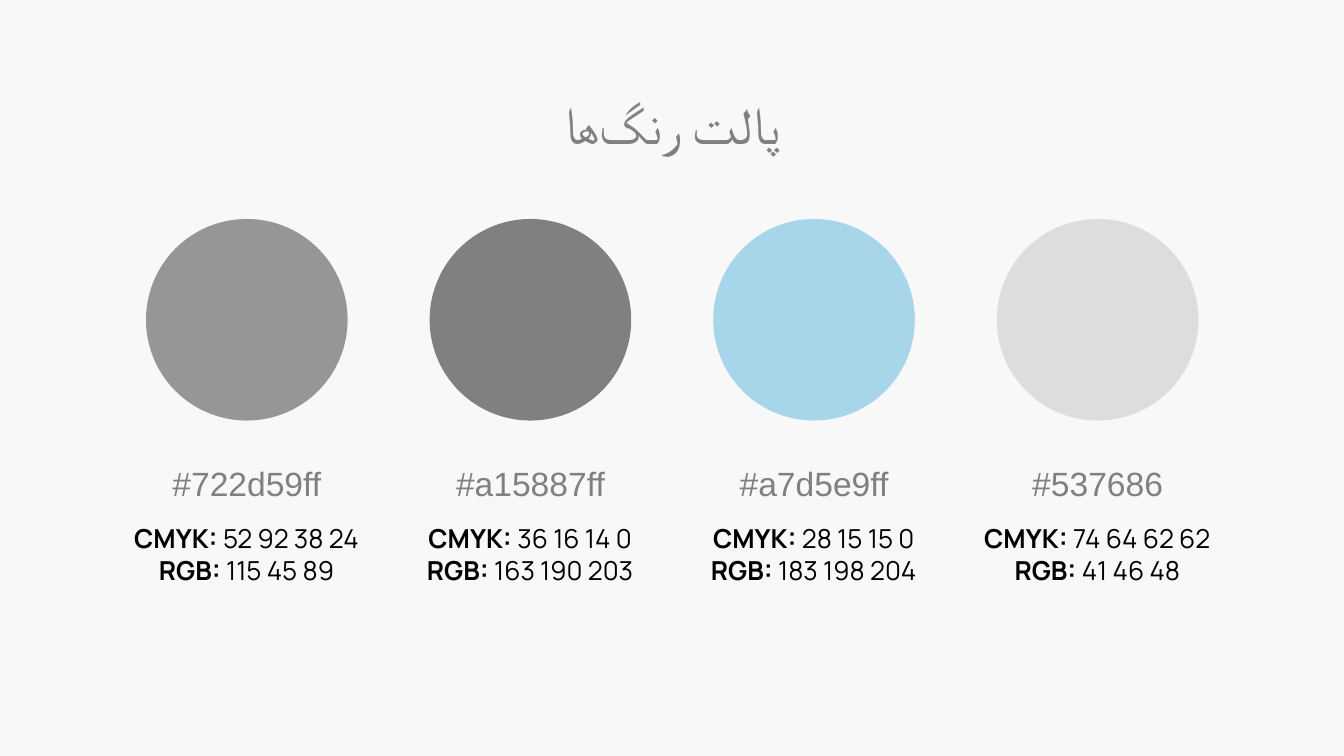
from dataclasses import dataclass

from pptx import Presentation
from pptx.dml.color import RGBColor
from pptx.enum import shapes, text
from pptx.util import Cm, Pt

BACK = RGBColor(0xF8, 0xF8, 0xF8)
GREY = RGBColor(0x80, 0x80, 0x80)
BLACK = RGBColor(0, 0, 0)
STEP = 5.36
LEFT = 1.98

HEAD = {"name": "Lato", "size": Pt(28), "bold": False}
CODE = {"name": "Arial", "size": Pt(18), "bold": False}
BODY = {"name": "Manrope", "size": Pt(14), "bold": False}
BOLD = BODY | {"bold": True}


@dataclass
class Swatch:
    fill: RGBColor
    code: str
    cmyk: str
    rgb: str


SWATCHES = [
    Swatch(RGBColor(0x96, 0x96, 0x96), "#722d59ff", "52 92 38 24", "115 45 89"),
    Swatch(GREY, "#a15887ff", "36 16 14 0", "163 190 203"),
    Swatch(RGBColor(0xA7, 0xD5, 0xE9), "#a7d5e9ff", "28 15 15 0", "183 198 204"),
    Swatch(RGBColor(0xDD, 0xDD, 0xDD), "#537686", "74 64 62 62", "41 46 48"),
]


def set_frame(frame, anchor=text.MSO_ANCHOR.TOP) -> None:
    form = {"word_wrap": True, "auto_size": text.MSO_AUTO_SIZE.NONE,
            "vertical_anchor": anchor}
    form |= {f"margin_{side}": Cm(0.25) for side in ("left", "top", "right", "bottom")}
    for key, value in form.items():
        setattr(frame, key, value)


def add_run(para, words: str, form: dict, color: RGBColor) -> None:
    para.alignment = text.PP_ALIGN.CENTER
    run = para.add_run()
    run.text = words
    for key, value in form.items():
        setattr(run.font, key, value)
    run.font.color.rgb = color


def add_box(slide, left: float, top: float, width: float, height: float):
    frame = slide.shapes.add_textbox(Cm(left), Cm(top), Cm(width), Cm(height)).text_frame
    set_frame(frame)
    return frame


def draw_title(slide, words: str) -> None:
    title = slide.shapes.title
    place = {"left": Cm(LEFT), "top": Cm(1.5), "width": Cm(4 * STEP), "height": Cm(1.6)}
    for key, value in place.items():
        setattr(title, key, value)
    set_frame(title.text_frame)
    add_run(title.text_frame.paragraphs[0], words, HEAD, GREY)


def draw_swatch(slide, swatch: Swatch, left: float) -> None:
    disc = slide.shapes.add_shape(
        shapes.MSO_SHAPE.OVAL, Cm(left + 0.78), Cm(4.14), Cm(3.81), Cm(3.81))
    disc.shadow.inherit = False
    disc.fill.solid()
    disc.fill.fore_color.rgb = swatch.fill
    disc.line.fill.background()

    code = add_box(slide, left + 0.64, 8.51, 4.09, 1.02)
    add_run(code.paragraphs[0], swatch.code, CODE, GREY)

    data = add_box(slide, left, 9.63, STEP, 1.6)
    lines = [data.paragraphs[0], data.add_paragraph()]
    pairs = [("CMYK: ", swatch.cmyk), ("RGB: ", swatch.rgb)]
    for para, (label, value) in zip(lines, pairs):
        add_run(para, label, BOLD, BLACK)
        add_run(para, value, BODY, BLACK)


def main() -> None:
    deck = Presentation()
    deck.slide_width, deck.slide_height = Cm(25.4), Cm(14.29)
    slide = deck.slides.add_slide(deck.slide_layouts[5])
    slide.background.fill.solid()
    slide.background.fill.fore_color.rgb = BACK
    draw_title(slide, "پالت رنگ\u200cها")
    for i, swatch in enumerate(SWATCHES):
        draw_swatch(slide, swatch, LEFT + i * STEP)
    deck.save("out.pptx")


if __name__ == "__main__":
    main()
